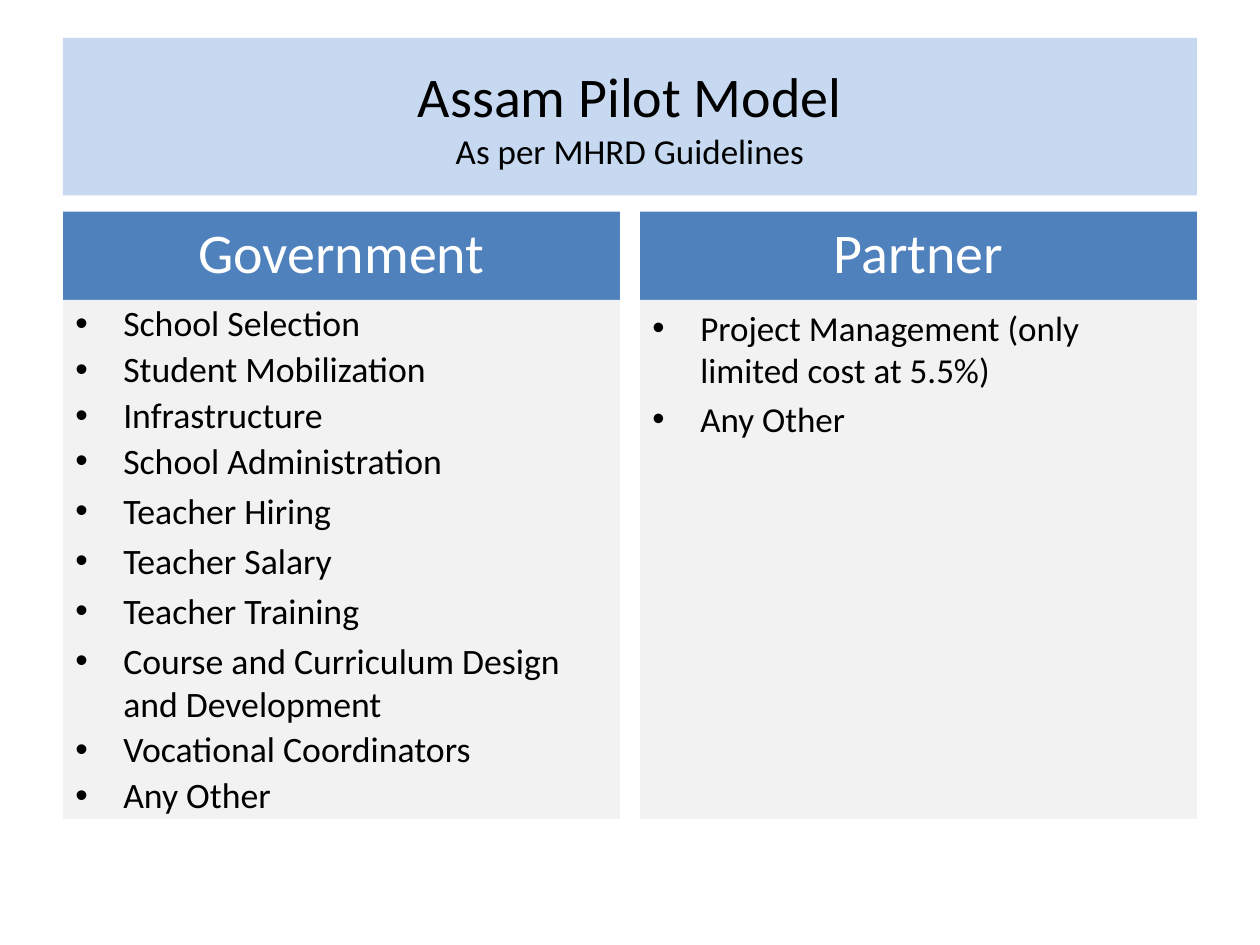
from lxml import etree
from pptx import Presentation
from pptx.dml.color import RGBColor
from pptx.enum.shapes import MSO_SHAPE
from pptx.enum.text import MSO_ANCHOR, PP_ALIGN
from pptx.oxml.ns import qn
from pptx.util import Inches, Pt

RECT = MSO_SHAPE.RECTANGLE
TOP, MIDDLE = MSO_ANCHOR.TOP, MSO_ANCHOR.MIDDLE
LEFT, CENTER = PP_ALIGN.LEFT, PP_ALIGN.CENTER
MARGIN, WIDTH, GAP = 0.5, 9, 0.16
HEAD = 0.7
TIGHT = 0.9

# Each duty has its line spacing.
STATE = [
    ("School Selection", TIGHT),
    ("Student Mobilization", TIGHT),
    ("Infrastructure", TIGHT),
    ("School Administration", TIGHT),
    ("Teacher Hiring", 1.0),
    ("Teacher Salary", 1.0),
    ("Teacher Training", 1.0),
    ("Course and Curriculum Design and Development", 1.0),
    ("Vocational Coordinators", TIGHT),
    ("Any Other", TIGHT),
]
PARTNER = [
    ("Project Management (only limited cost at 5.5%)", 1.0),
    ("Any Other", 1.0),
]


def paint(hue):
    return RGBColor.from_string(hue)


def panel(slide, x, y, w, h, fill, anchor=TOP):
    box = slide.shapes.add_shape(RECT, Inches(x), Inches(y), Inches(w), Inches(h))
    box.shadow.inherit = False
    box.fill.solid()
    box.fill.fore_color.rgb = paint(fill)
    box.line.fill.background()
    frame = box.text_frame
    frame.word_wrap = True
    frame.vertical_anchor = anchor
    return frame


def style(para, size, hue="000000", align=LEFT):
    para.alignment = align
    para.font.name = "Calibri"
    para.font.size = Pt(size)
    para.font.color.rgb = paint(hue)


def hang(para, size):
    """Set the hanging indent and a space before of a fifth of the text size."""
    para.space_before = Pt(round(size * 0.2, 1))
    props = para._p.get_or_add_pPr()
    props.set("marL", str(Inches(0.38)))
    props.set("indent", str(Inches(-0.38)))
    return props


def bullet(props):
    etree.SubElement(props, qn("a:buFont")).set("typeface", "Arial")
    etree.SubElement(props, qn("a:buChar")).set("char", "•")


def banner(slide, x, y, w, h):
    para = panel(slide, x, y, w, h, "C6D9F1", MIDDLE).paragraphs[0]
    style(para, 32, align=CENTER)
    para.add_run().text = "Assam Pilot Model"
    para.add_line_break()
    sub = para.add_run()
    sub.text = "As per MHRD Guidelines"
    sub.font.size = Pt(20)


def column(slide, x, y, w, h, title, items, size):
    head = panel(slide, x, y, w, HEAD, "4F81BD").paragraphs[0]
    head.text = title
    style(head, 32, "FFFFFF", CENTER)
    hang(head, 32)

    body = panel(slide, x, y + HEAD, w, h - HEAD, "F2F2F2")
    for i, (text, space) in enumerate(items):
        para = body.add_paragraph() if i else body.paragraphs[0]
        para.text = text
        para.line_spacing = space
        props = hang(para, size)
        style(para, size)
        bullet(props)


def main():
    deck = Presentation()
    deck.slide_width, deck.slide_height = Inches(10), Inches(7.5)
    slide = deck.slides.add_slide(deck.slide_layouts[6])
    banner(slide, MARGIN, 0.3, WIDTH, 1.25)
    wide = (WIDTH - GAP) / 2
    columns = [("Government", STATE, 20.4), ("Partner", PARTNER, 20)]
    for i, (title, items, size) in enumerate(columns):
        column(slide, MARGIN + i * (wide + GAP), 1.68, wide, 4.82, title, items, size)
    deck.save("out.pptx")


if __name__ == "__main__":
    main()
